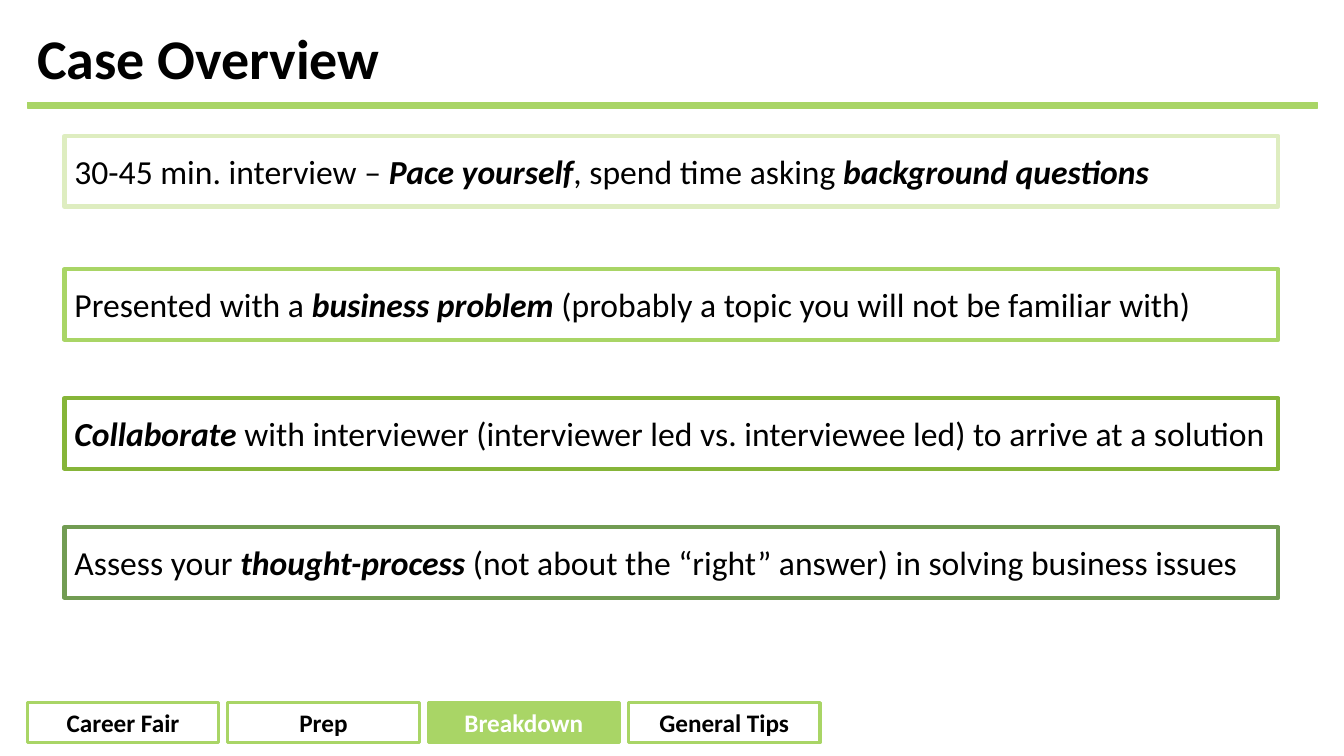
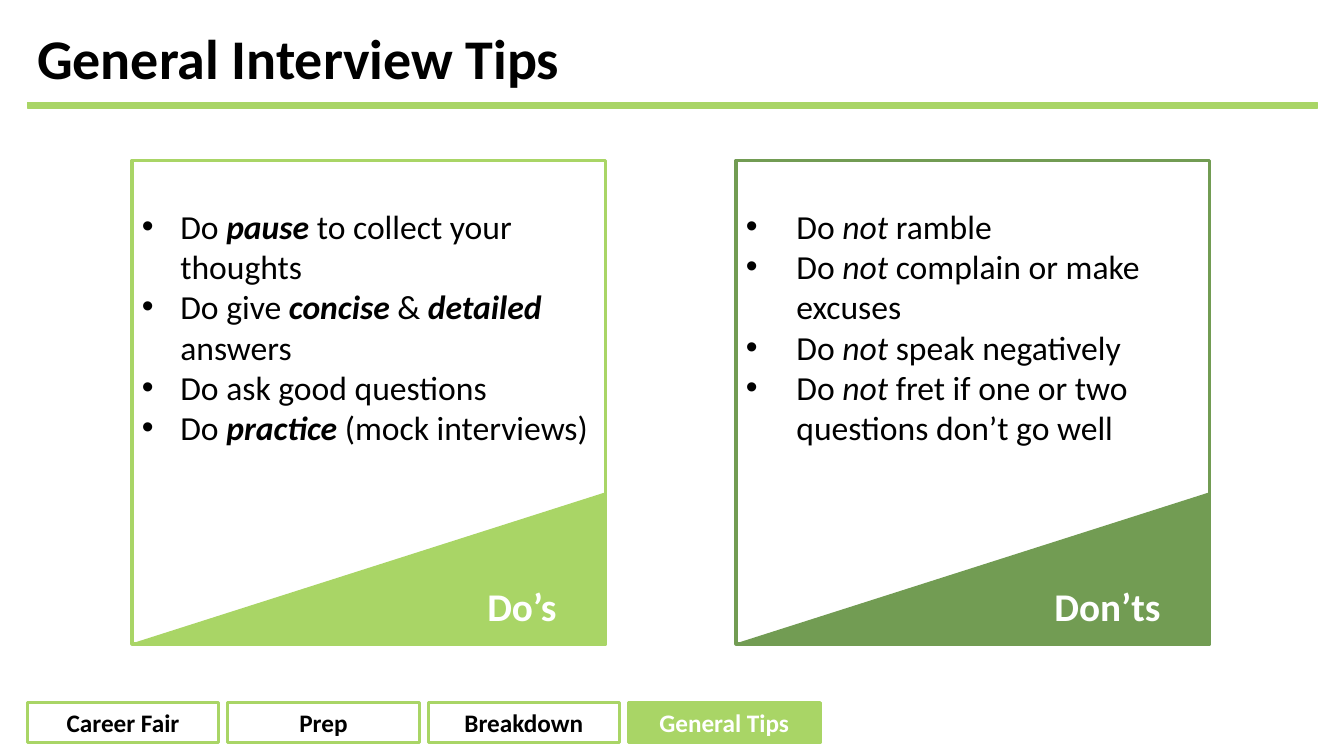
from lxml import etree
from pptx import Presentation
from pptx.dml.color import RGBColor
from pptx.enum.shapes import MSO_SHAPE
from pptx.enum.text import MSO_ANCHOR, PP_ALIGN
from pptx.oxml.ns import qn
from pptx.util import Inches, Pt

RECTANGLE = MSO_SHAPE.RECTANGLE
TRIANGLE = MSO_SHAPE.RIGHT_TRIANGLE
TOP, MIDDLE = MSO_ANCHOR.TOP, MSO_ANCHOR.MIDDLE
LEFT, CENTER, RIGHT = PP_ALIGN.LEFT, PP_ALIGN.CENTER, PP_ALIGN.RIGHT

SLIDE_WIDTH, SLIDE_HEIGHT = Inches(13.33), Inches(7.5)
FONT = "Calibri"
COLORS = {
    "black": "000000",
    "white": "FFFFFF",
    "pale": "DEEDC0",
    "green": "A9D566",
    "deep": "86B539",
    "forest": "729C53",
}

# Positions and sizes are percentages of the slide's width and height
MARGIN, CONTENT_WIDTH = 2.03, 96.02
TABS = ["Career Fair", "Prep", "Breakdown", "General Tips"]
TAB_PITCH = 14.91
CARD_LEFT, CARD_TOP, CARD_WIDTH, CARD_HEIGHT = 9.83, 21.2, 35.26, 64
CARD_PITCH, CORNER_HEIGHT = 44.94, 20

# Text between bars is emphasised
OVERVIEW = [
    (18, "pale", "30-45 min. interview – |Pace yourself|, spend time asking |background questions|"),
    (35.6, "green", "Presented with a |business problem |(probably a topic you will not be familiar with)"),
    (52.67, "deep", "|Collaborate| with interviewer (interviewer led vs. interviewee led) to arrive at a solution"),
    (69.73, "forest", "Assess your |thought-process| (not about the “right” answer) in solving business issues"),
]
DOS = [
    "Do| pause| to collect your thoughts",
    "Do give |concise| & |detailed| answers",
    "Do ask good questions",
    "Do |practice| (mock interviews)",
]
DONTS = [
    "Do |not| ramble",
    "Do |not| complain or make excuses",
    "Do |not| speak negatively",
    "Do |not| fret if one or two questions don’t go well",
]


def color(name):
    return RGBColor.from_string(COLORS[name])


def place(left, top, width, height):
    """Turn percentages of the slide into lengths."""
    return (int(SLIDE_WIDTH * left / 100), int(SLIDE_HEIGHT * top / 100),
            int(SLIDE_WIDTH * width / 100), int(SLIDE_HEIGHT * height / 100))


def add_box(slide, box, fill, line, line_width, kind=RECTANGLE):
    shape = slide.shapes.add_shape(kind, *place(*box))
    shape.shadow.inherit = False
    shape.fill.solid()
    shape.fill.fore_color.rgb = color(fill)
    shape.line.color.rgb = color(line)
    shape.line.width = Pt(line_width)
    return shape


def set_bullet(paragraph, indent):
    properties = paragraph._p.get_or_add_pPr()
    properties.set("marL", str(Inches(indent)))
    properties.set("indent", str(-Inches(indent)))
    etree.SubElement(properties, qn("a:buFont")).set("typeface", "Arial")
    etree.SubElement(properties, qn("a:buChar")).set("char", "•")


def write(shape, lines, size, ink="black", bold=None, align=LEFT, anchor=MIDDLE,
          indent=None, strong=True, line_spacing=None):
    """Fill a shape with paragraphs; strong makes emphasis bold as well as italic."""
    frame = shape.text_frame
    frame.word_wrap = True
    frame.vertical_anchor = anchor
    for index, line in enumerate(lines):
        paragraph = frame.paragraphs[0] if index == 0 else frame.add_paragraph()
        paragraph.alignment = align
        if line_spacing:
            paragraph.line_spacing = line_spacing
        if indent:
            set_bullet(paragraph, indent)
        font = paragraph.font
        font.name, font.size, font.bold = FONT, Pt(size), bold
        font.color.rgb = color(ink)
        for position, part in enumerate(line.split("|")):
            if not part:
                continue
            run = paragraph.add_run()
            run.text = part
            if position % 2:
                run.font.italic = True
                run.font.bold = strong or None


def add_frame(presentation, title, active_tab):
    """Start a slide with its title, rule and navigation tabs."""
    slide = presentation.slides.add_slide(presentation.slide_layouts[6])
    add_box(slide, (MARGIN, 13.6, CONTENT_WIDTH, 0.67), "green", "green", 1)
    title_box = slide.shapes.add_textbox(*place(MARGIN, 2.53, CONTENT_WIDTH, 11.07))
    write(title_box, [title], 40, bold=True, line_spacing=0.9)
    for column, label in enumerate(TABS):
        active = label == active_tab
        tab = add_box(slide, (MARGIN + column * TAB_PITCH, 92.93, 14.25, 5.33),
                      "green" if active else "white", "green", 2.25)
        write(tab, [label], 18, "white" if active else "black", bold=True, align=CENTER)
    return slide


def add_card(slide, column, accent, label, tips, indent, strong):
    """Draw a bulleted card with a labelled triangle in its lower corner."""
    left = CARD_LEFT + column * CARD_PITCH
    card = add_box(slide, (left, CARD_TOP, CARD_WIDTH, CARD_HEIGHT), "white", accent, 2.25)
    frame = card.text_frame
    frame.margin_top, frame.margin_right = Inches(0.45), Inches(0.05)
    write(card, tips, 24, anchor=TOP, indent=indent, strong=strong)

    corner_top = CARD_TOP + CARD_HEIGHT - CORNER_HEIGHT
    corner = add_box(slide, (left, corner_top, CARD_WIDTH, CORNER_HEIGHT),
                     accent, accent, 1, TRIANGLE)
    corner._element.spPr.xfrm.set("flipH", "1")
    write(corner, [label], 28, "white", bold=True, align=RIGHT)


def main():
    presentation = Presentation()
    presentation.slide_width, presentation.slide_height = SLIDE_WIDTH, SLIDE_HEIGHT

    # Case overview
    slide = add_frame(presentation, "Case Overview", "Breakdown")
    for top, accent, line in OVERVIEW:
        write(add_box(slide, (4.8, top, 90.32, 9.33), "white", accent, 3), [line], 24)

    # General tips
    slide = add_frame(presentation, "General Interview Tips", "General Tips")
    add_card(slide, 0, "green", "Do’s", DOS, indent=0.38, strong=True)
    add_card(slide, 1, "forest", "Don’ts", DONTS, indent=0.5, strong=False)

    presentation.save("out.pptx")


if __name__ == "__main__":
    main()
